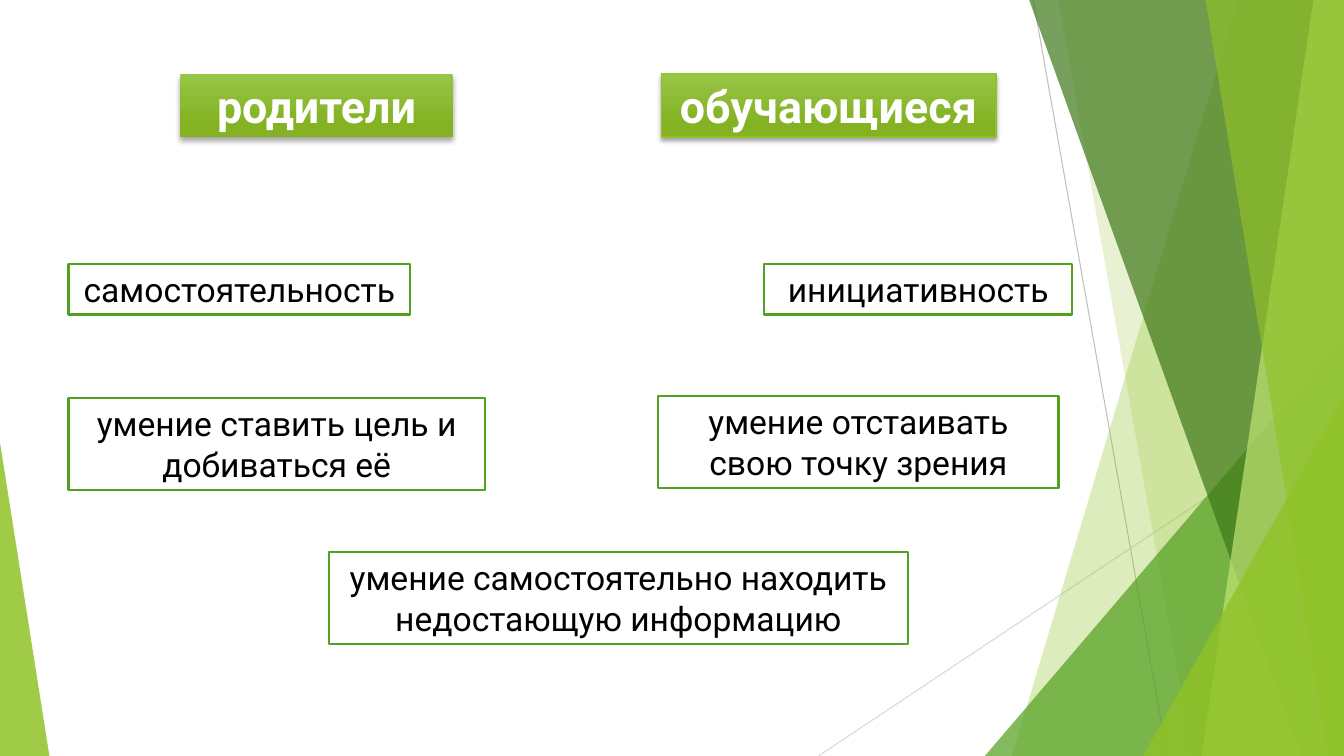
"""Build a slide listing qualities named by parents and by students."""
from lxml import etree
from pptx import Presentation
from pptx import util as u
from pptx.dml.color import RGBColor
from pptx.enum import shapes, text
from pptx.oxml.ns import qn

W, H = u.Inches(13.333), u.Inches(7.5)
FONT = "Roboto"

# Places are percentages of the slide's width and height.
HEADINGS = [
    ("родители", 1, (13.43, 9.73, 20.25, 8.4), None, (4, 3)),
    ("обучающиеся", 3, (49.2, 9.73, 24.9, 8.4), "90C226", (3, 2)),
]
ONE_ROW, TWO_ROWS = 6.67, 12.13
QUALITIES = [
    ("самостоятельность", (5.1, 34.93, 25.43, ONE_ROW)),
    ("инициативность", (56.85, 34.93, 22.95, ONE_ROW)),
    ("умение ставить цель и добиваться её", (5.1, 52.67, 30.98, TWO_ROWS)),
    ("умение отстаивать свою точку зрения", (48.98, 52.4, 29.78, TWO_ROWS)),
    ("умение самостоятельно находить недостающую информацию",
     (24.45, 73.07, 43.13, TWO_ROWS)),
]
RAYS = [((76.88, 0), (86.85, 100), "BFBFBF"),
        ((100, 53.73), (60.9, 100), "D9D9D9")]
FACETS = [
    ("band", (92.1, 75.3), "90C226", 30),
    ("band", (78.75, 88.73), "90C226", 20),
    ("triangle", (73.28, 100, 44.4, 1), "54A021", 72),
    ("band", (76.58, 96.83), "3F7819", 70),
    ("band", (97.73, 89.4), "C0E474", 70),
    ("band", (89.7, 98.85), "90C226", 65),
    ("triangle", (85.05, 100, 52.4, 1), "90C226", 80),
    ("triangle", (0, 3.68, 58.53, 0), "90C226", 85),
]


def rgb(value):
    return RGBColor.from_string(value)


def x(share):
    return round(W * share / 100)


def y(share):
    return round(H * share / 100)


def box(left, top, width, height):
    return x(left), y(top), x(width), y(height)


def add_ray(s, start, end, colour):
    ray = s.shapes.add_connector(shapes.MSO_CONNECTOR.STRAIGHT,
                                 x(start[0]), y(start[1]), x(end[0]), y(end[1]))
    ray.line.color.rgb = rgb(colour)
    ray.line.width = u.Pt(0.75)
    etree.SubElement(ray._element.spPr, qn("a:effectLst"))


def add_facet(s, kind, place, colour, opacity):
    if kind == "band":
        top, bottom = place
        fb = s.shapes.build_freeform(x(top), 0)
        fb.add_line_segments([(W, 0), (W, H), (x(bottom), H)])
        sp = fb.convert_to_shape()
    else:
        left, right, top, apex = place
        sp = s.shapes.add_shape(shapes.MSO_SHAPE.ISOSCELES_TRIANGLE,
                                *box(left, top, right - left, 100 - top))
        sp.adjustments[0] = apex
    sp.shadow.inherit = False
    sp.line.fill.background()
    sp.fill.solid()
    sp.fill.fore_color.rgb = rgb(colour)
    fill = sp._element.spPr.find(".//" + qn("a:srgbClr"))
    etree.SubElement(fill, qn("a:alpha"), val=str(opacity * 1000))


def write(sp, words, size, colour, bold=False):
    tf = sp.text_frame
    tf.text = words
    tf.word_wrap = True
    p = tf.paragraphs[0]
    p.alignment = text.PP_ALIGN.CENTER
    p.font.name, p.font.size, p.font.bold = FONT, u.Pt(size), bold
    p.font.color.rgb = rgb(colour)
    return tf, p


def add_shadow(sp, blur, distance):
    sp.shadow.inherit = False
    effects = sp._element.spPr.find(qn("a:effectLst"))
    shadow = etree.SubElement(effects, qn("a:outerShdw"), blurRad=str(u.Pt(blur)),
                              dist=str(u.Pt(distance)), dir="5400000", rotWithShape="0")
    black = etree.SubElement(shadow, qn("a:srgbClr"), val="000000")
    etree.SubElement(black, qn("a:alpha"), val="35000")


def fill_heading(s, words, idx, place, outline, shadow):
    sp = next(ph for ph in s.placeholders if ph.placeholder_format.idx == idx)
    sp.left, sp.top, sp.width, sp.height = box(*place)
    sp.fill.gradient()
    sp.fill.gradient_angle = 270
    for stop, (position, colour) in zip(sp.fill.gradient_stops,
                                        [(0, "97C547"), (0.78, "84B223")]):
        stop.position = position
        stop.color.rgb = rgb(colour)
    if outline:
        sp.line.color.rgb = rgb(outline)
        sp.line.width = u.Pt(1)
    add_shadow(sp, *shadow)
    tf, p = write(sp, words, 32, "FFFFFF", True)
    tf.auto_size = text.MSO_AUTO_SIZE.NONE
    tf.vertical_anchor = text.MSO_ANCHOR.BOTTOM
    p.space_before = u.Pt(10)


def add_quality(s, words, place):
    sp = s.shapes.add_shape(shapes.MSO_SHAPE.RECTANGLE, *box(*place))
    sp.shadow.inherit = False
    sp.fill.solid()
    sp.fill.fore_color.rgb = rgb("FFFFFF")
    sp.line.color.rgb = rgb("54A021")
    sp.line.width = u.Pt(1.5)
    tf, _ = write(sp, words, 24, "000000")
    tf.auto_size = text.MSO_AUTO_SIZE.SHAPE_TO_FIT_TEXT
    tf.vertical_anchor = text.MSO_ANCHOR.TOP


def main():
    prs = Presentation()
    prs.slide_width, prs.slide_height = W, H
    s = prs.slides.add_slide(prs.slide_layouts.get_by_name("Comparison"))
    for ray in RAYS:
        add_ray(s, *ray)
    for facet in FACETS:
        add_facet(s, *facet)
    for heading in HEADINGS:
        fill_heading(s, *heading)
    for quality in QUALITIES:
        add_quality(s, *quality)
    for ph in list(s.placeholders):
        if not ph.text_frame.text:
            ph._element.getparent().remove(ph._element)
    prs.save("out.pptx")


if __name__ == "__main__":
    main()
